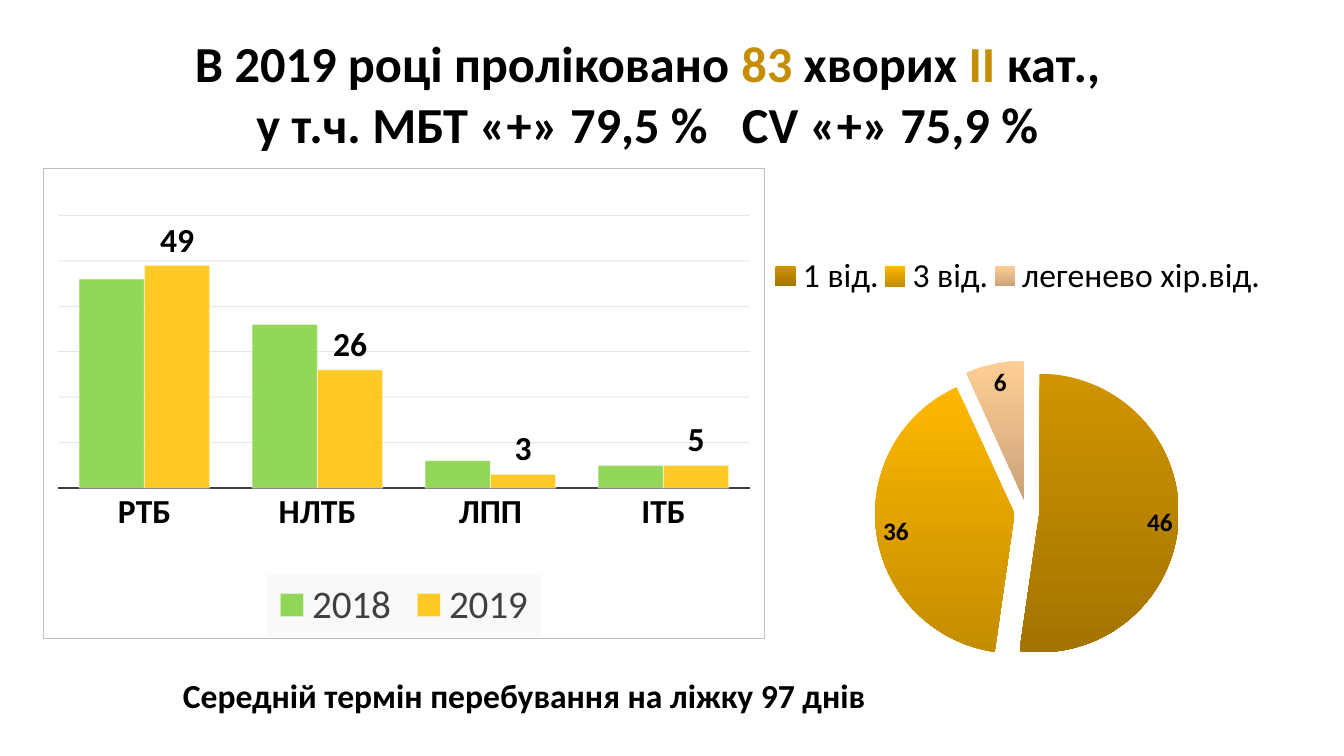
from pptx import Presentation
from pptx import util as u
from pptx.chart.data import CategoryChartData
from pptx.dml.color import RGBColor
from pptx.enum import chart as ch, text
from pptx.oxml import parse_xml
from pptx.oxml.ns import nsdecls, qn

EMU_PER_PX = 914400 / 100.8
FONT = "Calibri"
COLORS = {
    "ink": "000000", "paper": "FFFFFF", "accent": "C58D01",
    "border": "BFBFBF", "axis": "404040", "grid": "0D0D0D",
    "legend": "F2F2F2", "2018": "7FD13B", "2019": "FFC000",
}
SLICES = {
    "1 від.": (46, ("D09400", "A37400")),
    "3 від.": (36, ("FFB800", "C48D00")),
    "легенево хір.від.": (6, ("FFCE95", "CBA37A")),
}
FORMS = ("РТБ", "НЛТБ", "ЛПП", "ІТБ")
PATIENTS = {"2018": (46, 36, 6, 5), "2019": (49, 26, 3, 5)}
TITLE = (
    (("В 2019 році проліковано ", "ink"), ("83", "accent"), (" хворих ", "ink"),
     ("ІІ", "accent"), (" кат.,", "ink")),
    (("у т.ч. МБТ «+» 79,5 %   CV «+» 75,9 %", "ink"),),
)


def px(*lengths):
    return [u.Emu(round(length * EMU_PER_PX)) for length in lengths]


def rgb(name):
    return RGBColor.from_string(COLORS[name])


def style(font, size, color="ink", bold=False):
    font.name, font.size, font.bold = FONT, u.Pt(size), bold
    font.color.rgb = rgb(color)


def set_alpha(fill_parent, percent):
    """Make every solid colour below the element partly transparent."""
    for color in fill_parent.iter(qn("a:srgbClr")):
        color.append(parse_xml(f'<a:alpha {nsdecls("a")} val="{percent * 1000}"/>'))


def draw_line(line, color, width):
    line.color.rgb = rgb(color)
    line.width = u.Pt(width)


def layout(x, y, w, h, inner=False):
    target = '<c:layoutTarget val="inner"/>' if inner else ""
    return parse_xml(
        f'<c:layout {nsdecls("c")}><c:manualLayout>{target}'
        '<c:xMode val="edge"/><c:yMode val="edge"/>'
        f'<c:x val="{x}"/><c:y val="{y}"/><c:w val="{w}"/><c:h val="{h}"/>'
        '</c:manualLayout></c:layout>')


def add_chart(slide, box, kind, categories, series, plot_area):
    figures = CategoryChartData(number_format="0")
    figures.categories = categories
    for name, values in series.items():
        figures.add_series(name, values)
    chart = slide.shapes.add_chart(kind, *px(*box), figures).chart
    chart.has_title = False
    style(chart.font, 18)
    area = chart.element.find(".//" + qn("c:plotArea"))
    for automatic in area.findall(qn("c:layout")):
        area.remove(automatic)
    area.insert(0, layout(*plot_area, inner=True))
    return chart


def add_legend(chart, position, size, color, place):
    chart.has_legend = True
    chart.legend.position = position
    chart.legend.include_in_layout = False
    style(chart.legend.font, size, color)
    legend = chart.element.find(".//" + qn("c:legend"))
    for automatic in legend.findall(qn("c:layout")):
        legend.remove(automatic)
    legend.find(qn("c:legendPos")).addnext(layout(*place))
    return legend


def label_values(series, size, position):
    labels = series.data_labels
    labels.show_value = True
    labels.position = position
    style(labels.font, size, bold=True)


def departments_pie(slide, box):
    values = [count for count, _ in SLICES.values()]
    chart = add_chart(slide, box, ch.XL_CHART_TYPE.PIE, list(SLICES),
                      {"Series 1": values}, (0.31, 0.35, 0.52, 0.61))
    add_legend(chart, ch.XL_LEGEND_POSITION.TOP, 24, "ink", (0.15, 0.14, 0.81, 0.08))
    chart.plots[0].vary_by_categories = True
    series = chart.plots[0].series[0]
    for index, (_, shades) in enumerate(SLICES.values()):
        fill = series.points[index].format.fill
        fill.gradient()
        fill.gradient_angle = 270
        for stop, shade in zip(fill.gradient_stops, shades):
            stop.color.rgb = RGBColor.from_string(shade)
    label_values(series, 18, ch.XL_LABEL_POSITION.BEST_FIT)
    first_slice = chart.element.find(".//" + qn("c:dPt"))
    first_slice.addprevious(parse_xml(f'<c:explosion {nsdecls("c")} val="9"/>'))


def forms_columns(slide, box):
    chart = add_chart(slide, box, ch.XL_CHART_TYPE.COLUMN_CLUSTERED, FORMS,
                      PATIENTS, (0.02, 0.1, 0.96, 0.58))
    legend = add_legend(chart, ch.XL_LEGEND_POSITION.BOTTOM, 28, "axis",
                        (0.31, 0.87, 0.38, 0.13))
    backdrop = parse_xml(
        f'<c:spPr {nsdecls("c", "a")}><a:solidFill>'
        f'<a:srgbClr val="{COLORS["legend"]}"/></a:solidFill></c:spPr>')
    set_alpha(backdrop, 39)
    legend.find(qn("c:txPr")).addprevious(backdrop)
    frame = parse_xml(
        f'<c:spPr {nsdecls("c", "a")}><a:solidFill><a:srgbClr val="{COLORS["paper"]}"/>'
        f'</a:solidFill><a:ln w="{u.Pt(0.75)}"><a:solidFill>'
        f'<a:srgbClr val="{COLORS["border"]}"/></a:solidFill></a:ln></c:spPr>')
    chart.element.find(qn("c:txPr")).addprevious(frame)

    plot = chart.plots[0]
    plot.gap_width, plot.overlap, plot.vary_by_categories = 65, 0, False
    for series in plot.series:
        series.format.fill.solid()
        series.format.fill.fore_color.rgb = rgb(series.name)
        set_alpha(chart.element.findall(".//" + qn("c:ser"))[series.index]
                  .find(qn("c:spPr")), 85)
        draw_line(series.format.line, "paper", 0.75)
        set_alpha(series.format.line.fill.fore_color and
                  chart.element.findall(".//" + qn("c:ser"))[series.index]
                  .find(qn("c:spPr")).find(qn("a:ln")), 50)
    label_values(plot.series[1], 24, ch.XL_LABEL_POSITION.OUTSIDE_END)

    forms = chart.category_axis
    forms.major_tick_mark = ch.XL_TICK_MARK.NONE
    style(forms.tick_labels.font, 24, bold=True)
    draw_line(forms.format.line, "axis", 1.5)
    counts = chart.value_axis
    counts.visible = False
    counts.minimum_scale, counts.maximum_scale, counts.major_unit = 0, 60, 10
    counts.has_major_gridlines = True
    draw_line(counts.major_gridlines.format.line, "grid", 0.75)
    set_alpha(chart.element.find(".//" + qn("c:majorGridlines")), 10)


def text_frame(slide, box):
    frame = slide.shapes.add_textbox(*px(*box)).text_frame
    frame.word_wrap = True
    return frame


def heading(slide, box):
    frame = text_frame(slide, box)
    frame.vertical_anchor = text.MSO_ANCHOR.MIDDLE
    paragraph = frame.paragraphs[0]
    paragraph.alignment = text.PP_ALIGN.CENTER
    for number, line in enumerate(TITLE):
        if number:
            paragraph.add_line_break()
        for words, color in line:
            run = paragraph.add_run()
            run.text = words
            style(run.font, 36, color, bold=True)


def bed_days(slide, box):
    frame = text_frame(slide, box)
    frame.text = "Середній термін перебування на ліжку 97 днів"
    style(frame.paragraphs[0].runs[0].font, 24, bold=True)


def main():
    deck = Presentation()
    deck.slide_width, deck.slide_height = px(1344, 756)
    slide = deck.slides.add_slide(deck.slide_layouts[6])
    heading(slide, (179, 32, 937, 122))
    departments_pie(slide, (677, 186, 614, 498))
    forms_columns(slide, (43, 168, 722, 471))
    bed_days(slide, (173, 670, 833, 50))
    deck.save("out.pptx")


if __name__ == "__main__":
    main()
